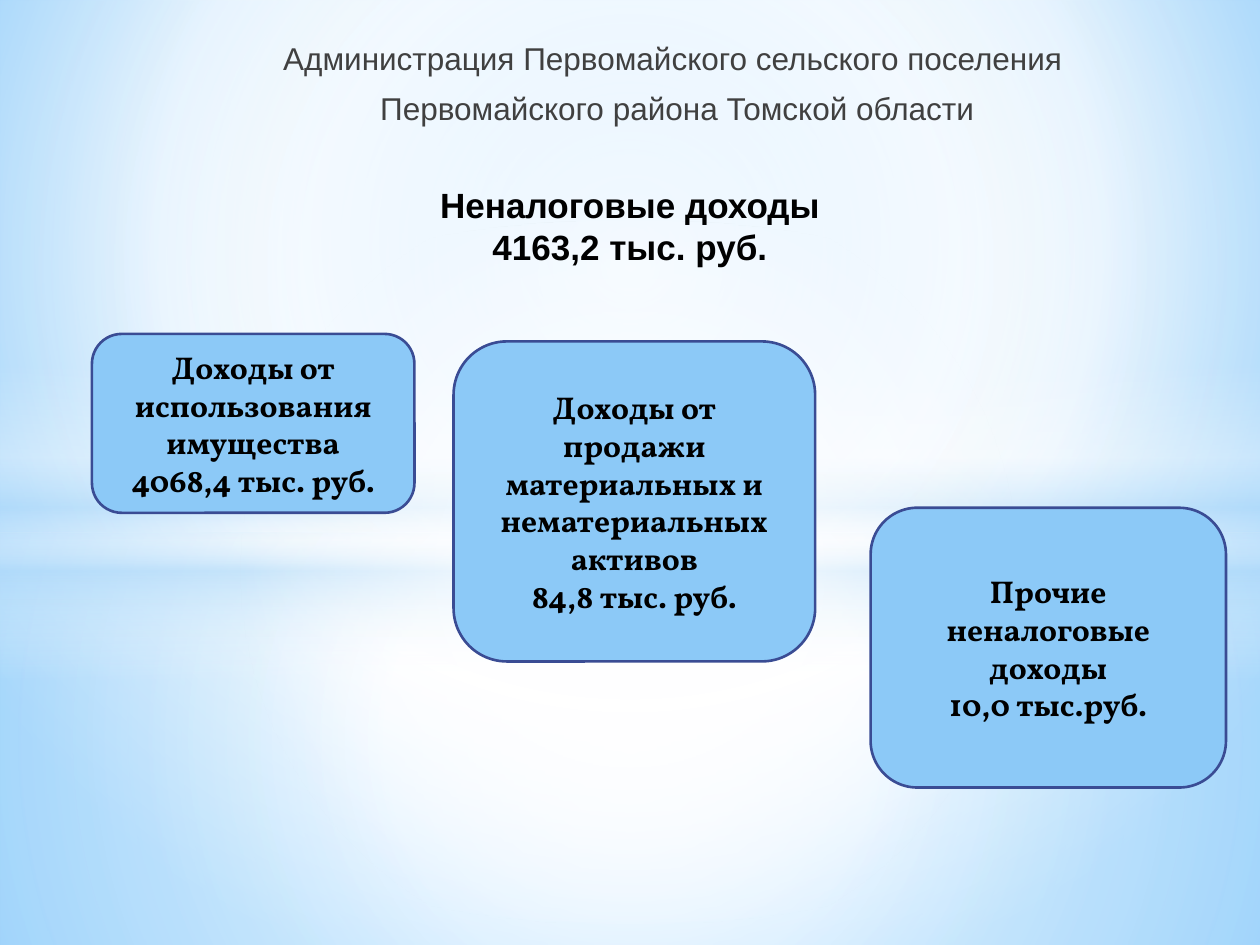
import pptx
import pptx.util
import pptx.oxml
import pptx.oxml.ns
import pptx.dml.color
import pptx.enum.text
import pptx.enum.shapes

Inches = pptx.util.Inches
Pt = pptx.util.Pt
KIND = pptx.enum.shapes.MSO_SHAPE
ANCHOR = pptx.enum.text.MSO_ANCHOR
CENTER = pptx.enum.text.PP_ALIGN.CENTER

BACK = [(0, "9ED5FF", 100), (60, "FFFFFF", 100), (100, "5BB9FF", 100)]
MIDDLE = (50, 50, 50, 50)
LAYERS = [
    (KIND.RECTANGLE, (0, 4.23, 10, 3.27), MIDDLE,
     [(0, "FFFFFF", 91), (37, "FFFFFF", 76), (100, "B4DCFA", 79)]),
    (KIND.RECTANGLE, (0, 0, 10, 4.23), MIDDLE,
     [(0, "FFFFFF", 89), (48, "FFFFFF", 62), (100, "B4DCFA", 79)]),
    (KIND.RECTANGLE, (0, 2.9, 10, 2.5), None,
     [(0, "FFFFFF", 0), (29, "FFFFFF", 30), (45, "B4DCFA", 40),
      (55, "FFFFFF", 26), (65, "B4DCFA", 60), (100, "FFFFFF", 0)]),
    (KIND.OVAL, (0, 1.75, 10, 5.58), MIDDLE,
     [(0, "FFFFFF", 100), (54, "FFFFFF", 0)]),
]
CARDS = [
    ((0.73, 2.65, 2.56, 1.42),
     ["Доходы от использования имущества", "4068,4 тыс. руб."]),
    ((3.6, 2.71, 2.87, 2.54),
     ["Доходы от продажи материальных и нематериальных активов", "84,8 тыс. руб."]),
    ((6.91, 4.03, 2.82, 2.22),
     ["Прочие неналоговые доходы", "10,0 тыс.руб."]),
]


def color(code):
    """Turn a hex string into a colour."""
    return pptx.dml.color.RGBColor.from_string(code)


def apply(item, form):
    """Set each attribute named in a dict of format values."""
    for name, value in form.items():
        setattr(item, name, value)


def blend(holder, stops, focus=None):
    """Replace the solid fill of an element with a gradient."""
    marks = "".join(
        f'<a:gs pos="{spot * 1000}"><a:srgbClr val="{code}">'
        f'<a:alpha val="{alpha * 1000}"/></a:srgbClr></a:gs>'
        for spot, code, alpha in stops)
    course = '<a:lin ang="5400000" scaled="0"/>'
    if focus:
        sides = " ".join(f'{side}="{part * 1000}"' for side, part in zip("ltrb", focus))
        course = f'<a:path path="circle"><a:fillToRect {sides}/></a:path>'
    fill = pptx.oxml.parse_xml(
        f'<a:gradFill {pptx.oxml.ns.nsdecls("a")} rotWithShape="1">'
        f'<a:gsLst>{marks}</a:gsLst>{course}</a:gradFill>')
    holder.replace(holder.find(pptx.oxml.ns.qn("a:solidFill")), fill)


def write(shape, lines, anchor, font, code, gaps=None):
    """Fill a shape with centred lines of one format."""
    frame = shape.text_frame
    apply(frame, {"word_wrap": True, "vertical_anchor": anchor,
                  "auto_size": pptx.enum.text.MSO_AUTO_SIZE.NONE})
    frame.text = "\n".join(lines)
    for para in frame.paragraphs:
        apply(para, {"alignment": CENTER, "line_spacing": 1.0,
                     "space_before": Pt(0), "space_after": Pt(0), **(gaps or {})})
        for run in para.runs:
            apply(run.font, font)
            run.font.color.rgb = color(code)


def block(slide, kind, box, code):
    """Add a plain filled shape without shadow."""
    shape = slide.shapes.add_shape(kind, *map(Inches, box))
    shape.shadow.inherit = False
    shape.fill.solid()
    shape.fill.fore_color.rgb = color(code)
    return shape


def scene(slide):
    """Paint the background and its soft layers of light."""
    fill = slide.background.fill
    fill.solid()
    fill.fore_color.rgb = color("FFFFFF")
    blend(next(slide.element.iter(pptx.oxml.ns.qn("p:bgPr"))), BACK, (20, 10, 20, 60))
    for kind, box, focus, stops in LAYERS:
        layer = block(slide, kind, box, "FFFFFF")
        layer.line.fill.background()
        blend(layer.element.spPr, stops, focus)


def card(slide, box, lines):
    """Add a rounded card naming one source of income."""
    shape = block(slide, KIND.ROUNDED_RECTANGLE, box, "8CC9F7")
    shape.line.color.rgb = color("3A4C94")
    shape.line.width = Pt(1.5)
    write(shape, lines, ANCHOR.MIDDLE,
          {"name": "Vollkorn", "size": Pt(18), "bold": True}, "000000")


def title(slide, box):
    """Place the title in front of the background layers."""
    shape = slide.shapes.title
    apply(shape, dict(zip(("left", "top", "width", "height"), map(Inches, box))))
    slide.shapes.element.append(shape.element)
    write(shape, ["Неналоговые доходы", "4163,2 тыс. руб."], ANCHOR.TOP,
          {"name": "Arial", "size": Pt(20), "bold": True}, "000000")


def header(slide, box):
    """Add the name of the administration."""
    shape = slide.shapes.add_textbox(*map(Inches, box))
    write(shape, ["Администрация Первомайского сельского поселения ",
                  "Первомайского района Томской области"], ANCHOR.MIDDLE,
          {"name": "Arial", "size": Pt(18)}, "404040",
          {"space_before": Pt(4), "space_after": Pt(3)})


def main():
    """Build and save the slide."""
    deck = pptx.Presentation()
    apply(deck, {"slide_width": Inches(10), "slide_height": Inches(7.5)})
    slide = deck.slides.add_slide(deck.slide_layouts[5])
    scene(slide)
    for box, lines in CARDS:
        card(slide, box, lines)
    title(slide, (2.5, 1.41, 5, 0.77))
    header(slide, (1.69, 0.27, 7.37, 0.77))
    deck.save("out.pptx")


if __name__ == "__main__":
    main()
